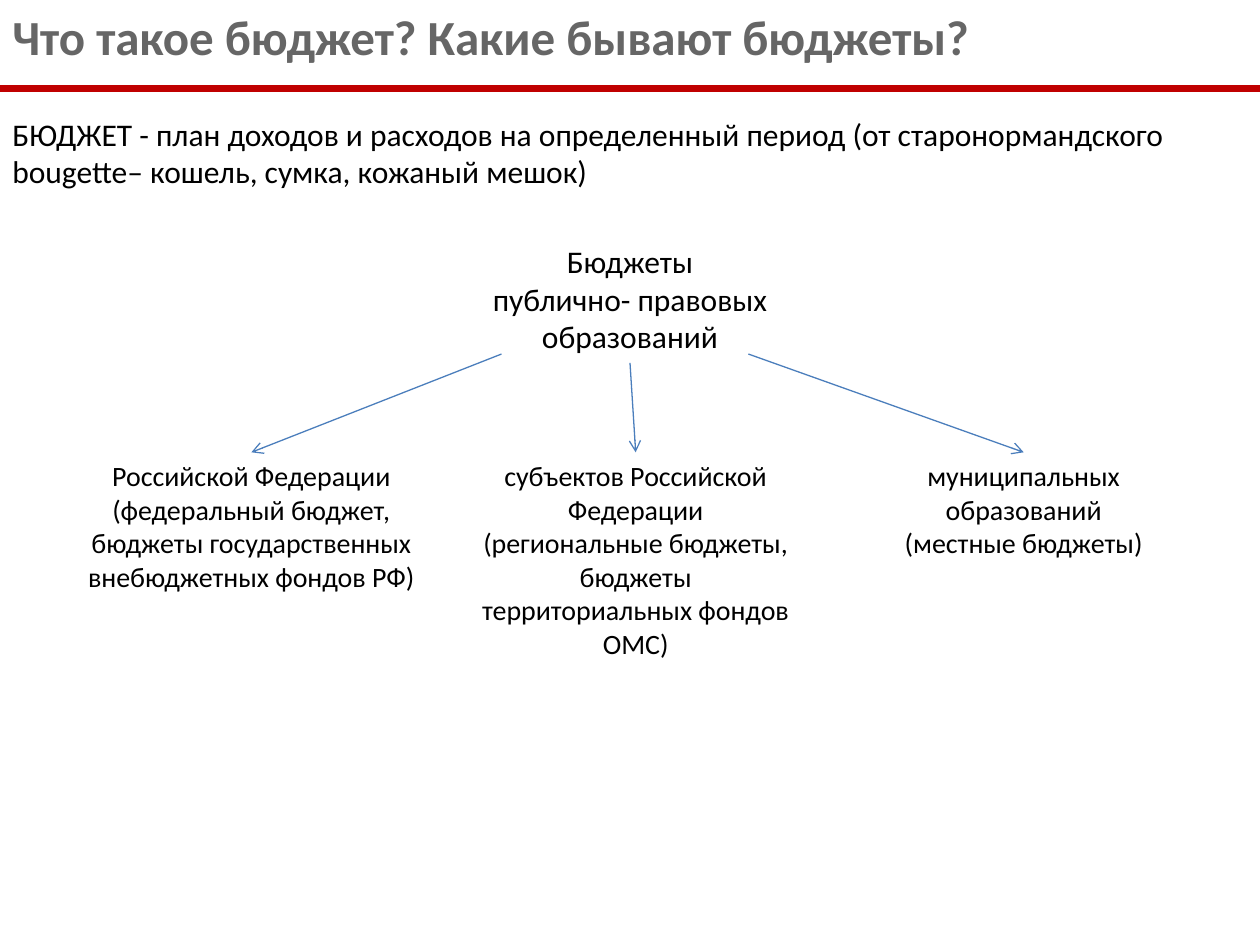
from lxml.etree import SubElement
from pptx import Presentation
from pptx.dml.color import RGBColor
from pptx.enum.shapes import MSO_CONNECTOR
from pptx.enum.text import MSO_AUTO_SIZE, PP_ALIGN
from pptx.oxml.ns import qn
from pptx.util import Inches, Pt

WIDTH, HEIGHT = 10, 7.5
BRANCH_TOP = 3.59
BRANCHES = [
    (0.55, 2.89, 1.18, (3.98, 2.81),
     ["Российской Федерации", "(федеральный бюджет,",
      "бюджеты государственных", "внебюджетных фондов РФ)"]),
    (3.52, 3.05, 1.72, (5, 2.88),
     ["субъектов Российской Федерации", "(региональные бюджеты, бюджеты",
      "территориальных фондов ОМС)"]),
    (6.72, 2.81, 0.91, (5.94, 2.81),
     ["муниципальных образований", "(местные бюджеты)"]),
]


def color(hex_code):
    """Turn a hex string into a colour."""
    return RGBColor.from_string(hex_code)


def add_text(slide, area, lines, size, align=PP_ALIGN.CENTER, ink="000000", bold=False):
    """Add a wrapped text box with one paragraph per line."""
    frame = slide.shapes.add_textbox(*map(Inches, area)).text_frame
    frame.word_wrap = True
    frame.auto_size = MSO_AUTO_SIZE.SHAPE_TO_FIT_TEXT
    for index, line in enumerate(lines):
        paragraph = frame.paragraphs[0] if index == 0 else frame.add_paragraph()
        paragraph.alignment = align
        run = paragraph.add_run()
        run.text = line
        run.font.name = "Calibri"
        run.font.size = Pt(size)
        run.font.bold = bold
        run.font.color.rgb = color(ink)


def add_line(slide, start, end, ink, weight, arrow=False):
    """Add a straight line, with an open arrowhead at its end if asked."""
    line = slide.shapes.add_connector(
        MSO_CONNECTOR.STRAIGHT, *map(Inches, (*start, *end)))
    line.line.color.rgb = color(ink)
    line.line.width = Pt(weight)
    properties = line._element.spPr
    if arrow:
        SubElement(properties.find(qn("a:ln")), qn("a:tailEnd"), type="arrow")
    SubElement(properties, qn("a:effectLst"))


def add_branch(slide, left, width, height, origin, lines):
    """Add one kind of budget and the arrow that leads to it."""
    add_text(slide, (left, BRANCH_TOP, width, height), lines, 16)
    add_line(slide, origin, (left + width / 2, BRANCH_TOP), "4B7EBC", 0.75, arrow=True)


def main():
    """Build the slide and save it."""
    deck = Presentation()
    deck.slide_width, deck.slide_height = Inches(WIDTH), Inches(HEIGHT)
    slide = deck.slides.add_slide(deck.slide_layouts[6])
    add_text(slide, (0, 0, WIDTH, 0.57), ["Что такое бюджет? Какие бывают бюджеты?"],
             28, PP_ALIGN.LEFT, "666666", True)
    add_line(slide, (0, 0.7), (WIDTH, 0.7), "C00000", 4)
    add_text(slide, (0, 0.86, WIDTH, 1.31),
             ["БЮДЖЕТ - план доходов и расходов на определенный период "
              "(от старонормандского bougette– кошель, сумка, кожаный мешок)"],
             18, PP_ALIGN.LEFT)
    add_text(slide, (WIDTH / 4, 1.87, WIDTH / 2, 1.01),
             ["Бюджеты", "публично- правовых", "образований"], 18)
    for branch in BRANCHES:
        add_branch(slide, *branch)
    deck.save("out.pptx")


if __name__ == "__main__":
    main()
